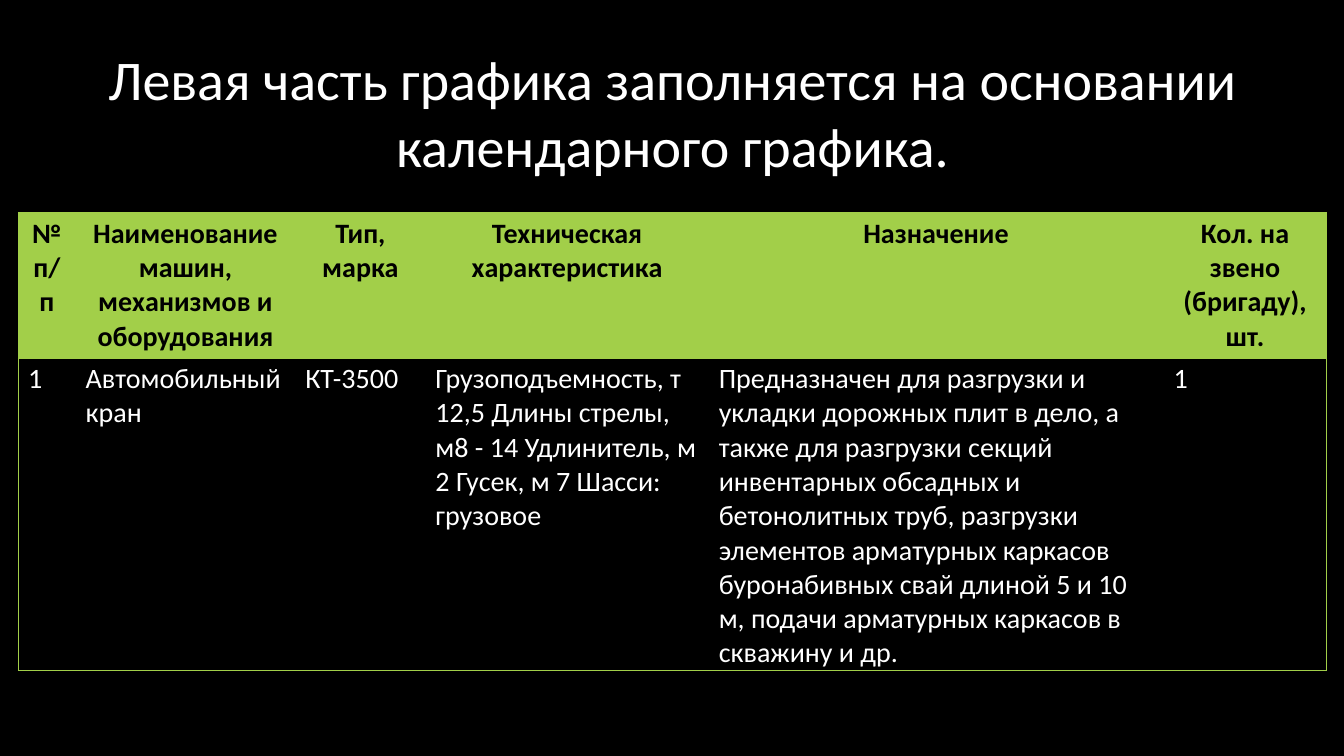
import dataclasses

import lxml.etree
import pptx
import pptx.dml.color
import pptx.enum.text
import pptx.oxml.ns
import pptx.util

PX = 9144  # 100 px to the inch
FONT = "Calibri"
BLACK, WHITE, GREEN = "000000", "FFFFFF", "A2CF49"
ALIGN = pptx.enum.text.PP_ALIGN


@dataclasses.dataclass
class Column:
    width: int
    head: str
    body: str


@dataclasses.dataclass
class Row:
    height: int
    fill: str
    ink: str
    bold: bool
    align: ALIGN
    bottom: int


COLUMNS = [
    Column(57, "№ п/п", "1"),
    Column(218, "Наименование машин, механизмов и оборудования",
           "Автомобильный кран"),
    Column(129, "Тип, марка", "КТ-3500"),
    Column(281, "Техническая характеристика",
           "Грузоподъемность, т 12,5 Длины стрелы, м8 - 14 "
           "Удлинитель, м 2 Гусек, м 7 Шасси: грузовое"),
    Column(451, "Назначение",
           "Предназначен для разгрузки и укладки дорожных плит в дело, "
           "а также для разгрузки секций инвентарных обсадных и "
           "бетонолитных труб, разгрузки элементов арматурных каркасов "
           "буронабивных свай длиной 5 и 10 м, подачи арматурных каркасов "
           "в скважину и др."),
    Column(162, "Кол. на звено (бригаду), шт.", "1"),
]
ROWS = [
    Row(144, GREEN, BLACK, True, ALIGN.CENTER, 4),
    Row(309, BLACK, WHITE, False, ALIGN.LEFT, 0),
]


def px(n: int) -> pptx.util.Emu:
    return pptx.util.Emu(n * PX)


def paint(fill, color: str) -> None:
    fill.solid()
    fill.fore_color.rgb = pptx.dml.color.RGBColor.from_string(color)


def style(para, size: int, color: str, bold: bool, align: ALIGN) -> None:
    para.alignment = align
    para.font.name = FONT
    para.font.size = pptx.util.Pt(size)
    para.font.bold = bold
    paint(para.font.fill, color)


def border(cell, sides: str) -> None:
    """Draw the sides named by letters (LRTB) and clear the others."""
    qn = pptx.oxml.ns.qn
    props = cell._tc.get_or_add_tcPr()
    for i, side in enumerate("LRTB"):
        line = lxml.etree.Element(qn(f"a:ln{side}"), w=str(pptx.util.Pt(0.5)))
        if side in sides:
            fill = lxml.etree.SubElement(line, qn("a:solidFill"))
            lxml.etree.SubElement(fill, qn("a:srgbClr"), val=GREEN)
        else:
            lxml.etree.SubElement(line, qn("a:noFill"))
        props.insert(i, line)


def add_title(slide, text: str) -> None:
    title = slide.shapes.title
    title.left, title.top = px(18), px(38)
    title.width, title.height = px(1298), px(145)
    frame = title.text_frame
    frame.text = text
    frame.word_wrap = True
    frame.auto_size = pptx.enum.text.MSO_AUTO_SIZE.NONE
    frame.vertical_anchor = pptx.enum.text.MSO_ANCHOR.MIDDLE
    style(frame.paragraphs[0], 40, WHITE, False, ALIGN.CENTER)


def add_grid(slide) -> None:
    wide = sum(col.width for col in COLUMNS)
    high = sum(row.height for row in ROWS)
    table = slide.shapes.add_table(
        len(ROWS), len(COLUMNS), px(18), px(211), px(wide), px(high)).table
    for c, col in enumerate(COLUMNS):
        table.columns[c].width = px(col.width)
    for r, row in enumerate(ROWS):
        table.rows[r].height = px(row.height)
        for c, col in enumerate(COLUMNS):
            cell = table.cell(r, c)
            cell.text = (col.head, col.body)[r]
            cell.margin_top, cell.margin_bottom = px(4), px(row.bottom)
            paint(cell.fill, row.fill)
            style(cell.text_frame.paragraphs[0], 20, row.ink, row.bold,
                  row.align)
            sides = "T" if r == 0 else "TB"
            if c == 0:
                sides += "L"
            if c == len(COLUMNS) - 1:
                sides += "R"
            border(cell, sides)


def main() -> None:
    deck = pptx.Presentation()
    deck.slide_width, deck.slide_height = px(1333), px(750)
    slide = deck.slides.add_slide(deck.slide_layouts.get_by_name("Title Only"))
    paint(slide.background.fill, BLACK)
    add_title(slide, "Левая часть графика заполняется на основании "
                     "календарного графика.")
    add_grid(slide)
    deck.save("out.pptx")


if __name__ == "__main__":
    main()
